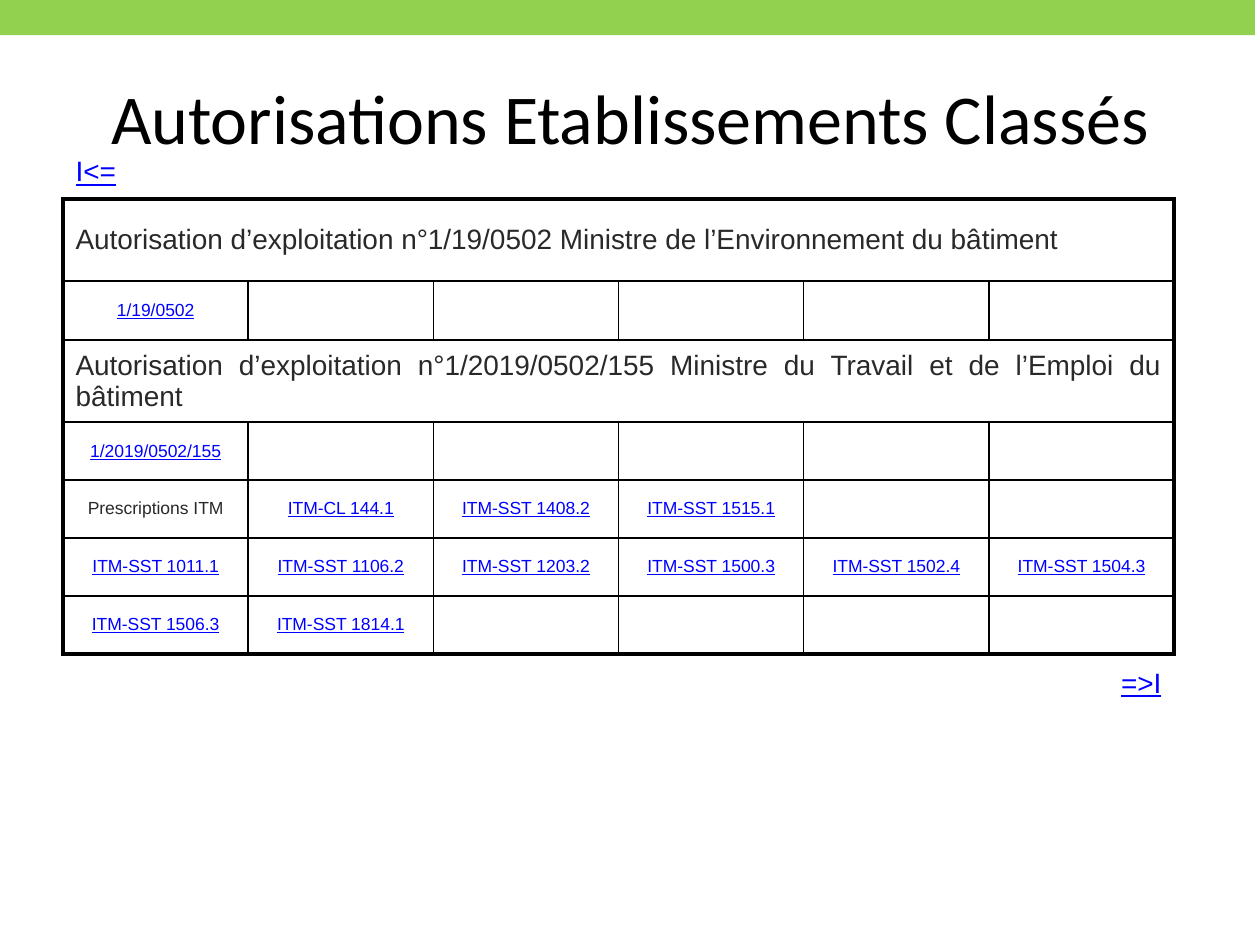
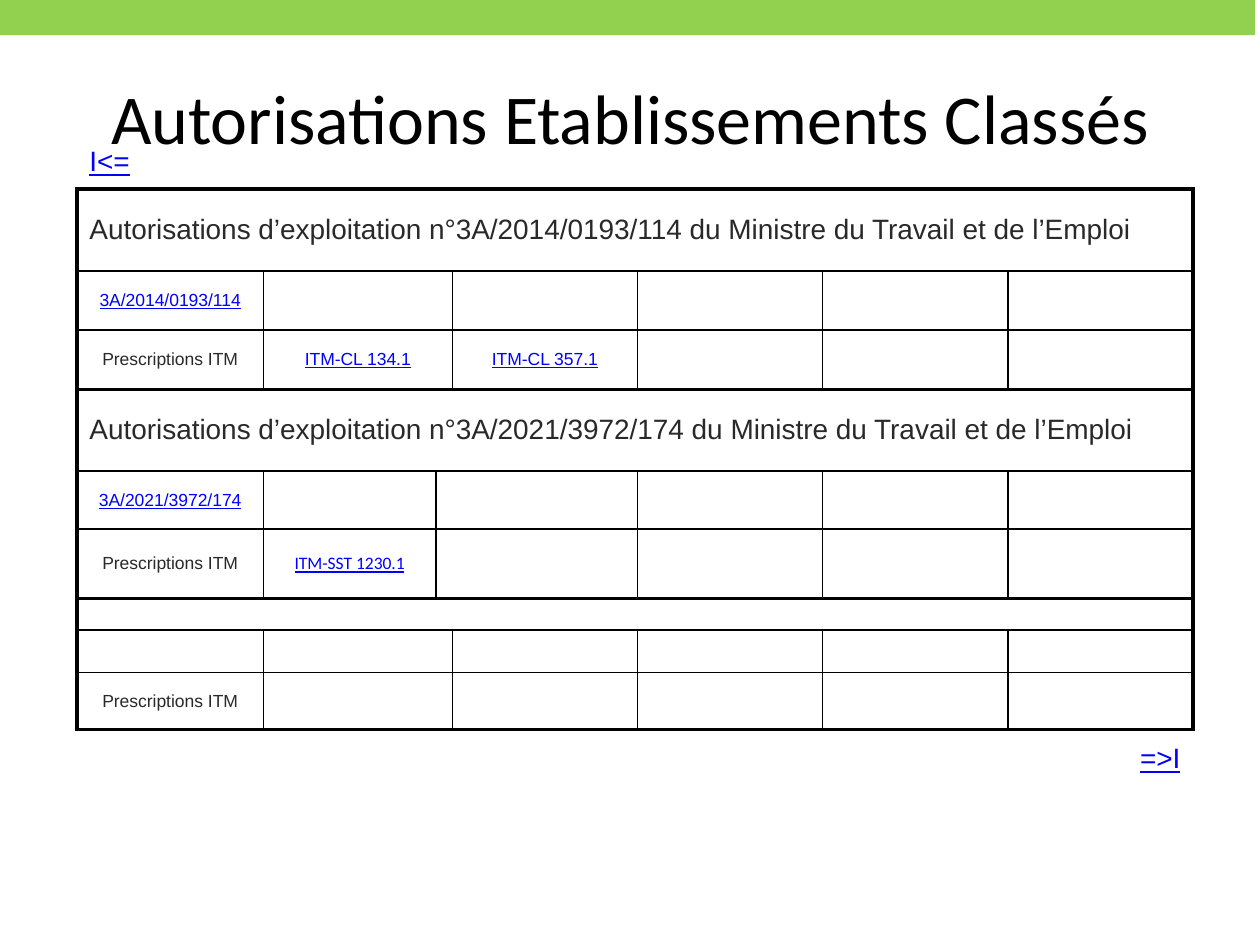
from dataclasses import dataclass
from typing import Sequence

from lxml.etree import SubElement
from pptx import Presentation
from pptx.dml.color import RGBColor
from pptx.enum.shapes import MSO_SHAPE
from pptx.enum.text import MSO_ANCHOR, PP_ALIGN
from pptx.oxml.ns import qn
from pptx.util import Inches, Pt

COLOURS = {"band": "92D050", "title": "000000", "text": "292929",
           "link": "0000FF", "border": "000000"}
TITLE = "Autorisations Etablissements Classés"
PRESCRIPTIONS = "Prescriptions ITM"
NO_GRID_STYLE = "{2D5ABB26-0587-4C30-8999-92F81FD0307C}"
THIN, THICK = 1, 2.25
EMPTY_SIZE = 8


@dataclass
class Row:
    """One table row: texts go to its visible cells from the left."""
    height: float
    texts: Sequence[str] = ()
    merge: tuple = ()
    size: float = 10
    align: PP_ALIGN = PP_ALIGN.CENTER
    link_font: str = "Arial"
    heading: bool = False
    nav: bool = False


def heading(text, last_column, height=0.65, align=PP_ALIGN.LEFT):
    """Describe a heading row merged over the whole table."""
    return Row(height, [text] if text else [], (0, last_column), 16, align, heading=True)


def nav(height, texts, align, merge=()):
    """Describe an unframed navigation row."""
    return Row(height, texts, merge, 16, align, nav=True)


def colour(name):
    """Return a named colour."""
    return RGBColor.from_string(COLOURS[name])


def style_text(frame, font, size, colour_name, align, underline=False):
    """Format the only paragraph of a text frame."""
    para = frame.paragraphs[0]
    para.alignment = align
    for span in para.runs:
        span.font.name = font
        span.font.size = Pt(size)
        span.font.color.rgb = colour(colour_name)
        span.font.underline = underline


def add_page(deck):
    """Add a blank page with the band and the title."""
    page = deck.slides.add_slide(deck.slide_layouts[6])
    band = page.shapes.add_shape(MSO_SHAPE.RECTANGLE, 0, 0, Inches(9.96), Inches(0.28))
    band.shadow.inherit = False
    band.fill.solid()
    band.fill.fore_color.rgb = colour("band")
    band.line.fill.background()
    box = page.shapes.add_textbox(Inches(0.5), Inches(0.3), Inches(9), Inches(1.25))
    frame = box.text_frame
    frame.word_wrap = True
    frame.vertical_anchor = MSO_ANCHOR.MIDDLE
    frame.text = TITLE
    style_text(frame, "Calibri", 40, "title", PP_ALIGN.CENTER)
    return page


def set_borders(cell, weights):
    """Draw the given cell sides, keyed L, R, T and B, in points."""
    properties = cell._tc.get_or_add_tcPr()
    for side in "LRTB":
        if weights.get(side):
            line = SubElement(properties, qn(f"a:ln{side}"), w=str(Pt(weights[side])))
            fill = SubElement(line, qn("a:solidFill"))
            SubElement(fill, qn("a:srgbClr"), val=COLOURS["border"])


def edge_weight(above, below):
    """Return the weight of the line between two rows."""
    if above is None or below is None:
        return 0
    if above.nav or below.nav:
        return THICK
    return THIN


def fill_cell(cell, row, text):
    """Write one visible cell."""
    cell.vertical_anchor = MSO_ANCHOR.MIDDLE
    if not text:
        para = cell.text_frame.paragraphs[0]
        SubElement(para._p, qn("a:endParaRPr"), sz=str(EMPTY_SIZE * 100))
        return
    cell.text_frame.text = text
    plain = row.heading or text == PRESCRIPTIONS
    style_text(cell.text_frame, "Arial" if plain else row.link_font, row.size,
               "text" if plain else "link", row.align, not plain)


def frame_row(cells, row, top, bottom):
    """Draw the borders of one row, leaving merged cells undivided."""
    last = len(cells) - 1
    for column, cell in enumerate(cells):
        weights = {"T": top, "B": bottom}
        end = column if cell.is_spanned else column + cell.span_width - 1
        closes = end == last or not cells[end + 1].is_spanned
        if not row.nav:
            if not cell.is_spanned:
                weights["L"] = THIN if column else THICK
            if closes:
                weights["R"] = THICK if end == last else THIN
        set_borders(cell, weights)
        cell.fill.background()


def add_permit_table(page, left, top, widths, rows, split_sections=False):
    """Add a table of permits, with thick lines above split sections."""
    height = sum(row.height for row in rows)
    table = page.shapes.add_table(len(rows), len(widths), Inches(left), Inches(top),
                                  Inches(sum(widths)), Inches(height)).table
    table._tbl.tblPr.find(qn("a:tableStyleId")).text = NO_GRID_STYLE
    table.first_row = table.horz_banding = False
    for column, width in zip(table.columns, widths):
        column.width = Inches(width)
    edges = [edge_weight(above, below)
             for above, below in zip([None, *rows], [*rows, None])]
    if split_sections:
        edges = [THICK if index < len(rows) and rows[index].heading else edge
                 for index, edge in enumerate(edges)]
    for index, row in enumerate(rows):
        table.rows[index].height = Inches(row.height)
        if row.merge:
            first, last = row.merge
            table.cell(index, first).merge(table.cell(index, last))
        cells = list(table.rows[index].cells)
        visible = [cell for cell in cells if not cell.is_spanned]
        for column, cell in enumerate(visible):
            fill_cell(cell, row, row.texts[column] if column < len(row.texts) else "")
        frame_row(cells, row, edges[index], edges[index + 1])


def add_building_page(deck):
    """Add the page of the building permits."""
    rows = [
        nav(0.43, ["I<="], PP_ALIGN.LEFT),
        heading("Autorisation d’exploitation n°1/19/0502 Ministre de l’Environnement "
                "du bâtiment", 5),
        Row(0.47, ["1/19/0502"]),
        heading("Autorisation d’exploitation n°1/2019/0502/155 Ministre du Travail et "
                "de l’Emploi du bâtiment", 5, align=PP_ALIGN.JUSTIFY),
        Row(0.46, ["1/2019/0502/155"]),
        Row(0.46, [PRESCRIPTIONS, "ITM-CL 144.1", "ITM-SST 1408.2", "ITM-SST 1515.1"]),
        Row(0.46, ["ITM-SST 1011.1", "ITM-SST 1106.2", "ITM-SST 1203.2",
                   "ITM-SST 1500.3", "ITM-SST 1502.4", "ITM-SST 1504.3"]),
        Row(0.46, ["ITM-SST 1506.3", "ITM-SST 1814.1"]),
        nav(0.47, [""] * 5 + ["=>I"], PP_ALIGN.RIGHT),
    ]
    add_permit_table(add_page(deck), 0.5, 1.15, [1.47] * 6, rows)


def add_labour_page(deck):
    """Add the page of the labour ministry permits."""
    wide, narrow = (1, 2), (2, 3)
    title = "Autorisations d’exploitation n°{} du Ministre du Travail et de l’Emploi"
    first, second = "3A/2014/0193/114", "3A/2021/3972/174"
    rows = [
        nav(0.43, ["I<="], PP_ALIGN.LEFT, wide),
        heading(title.format(first), 6),
        Row(0.47, [first], wide),
        Row(0.47, [PRESCRIPTIONS, "ITM-CL 134.1", "ITM-CL 357.1"], wide),
        heading(title.format(second), 6),
        Row(0.46, [second], narrow),
        Row(0.55, [PRESCRIPTIONS, "ITM-SST 1230.1"], narrow, link_font="Calibri"),
        heading("", 6, 0.25),
        Row(0.34, merge=wide),
        Row(0.45, [PRESCRIPTIONS], wide),
        nav(0.47, [""] * 5 + ["=>I"], PP_ALIGN.RIGHT, wide),
    ]
    widths = [1.48, 1.37, 0.13] + [1.47] * 4
    add_permit_table(add_page(deck), 0.61, 1.07, widths, rows, split_sections=True)


def main():
    """Build and save the deck."""
    deck = Presentation()
    deck.slide_width, deck.slide_height = Inches(10), Inches(7.5)
    add_building_page(deck)
    add_labour_page(deck)
    deck.save("out.pptx")


if __name__ == "__main__":
    main()
